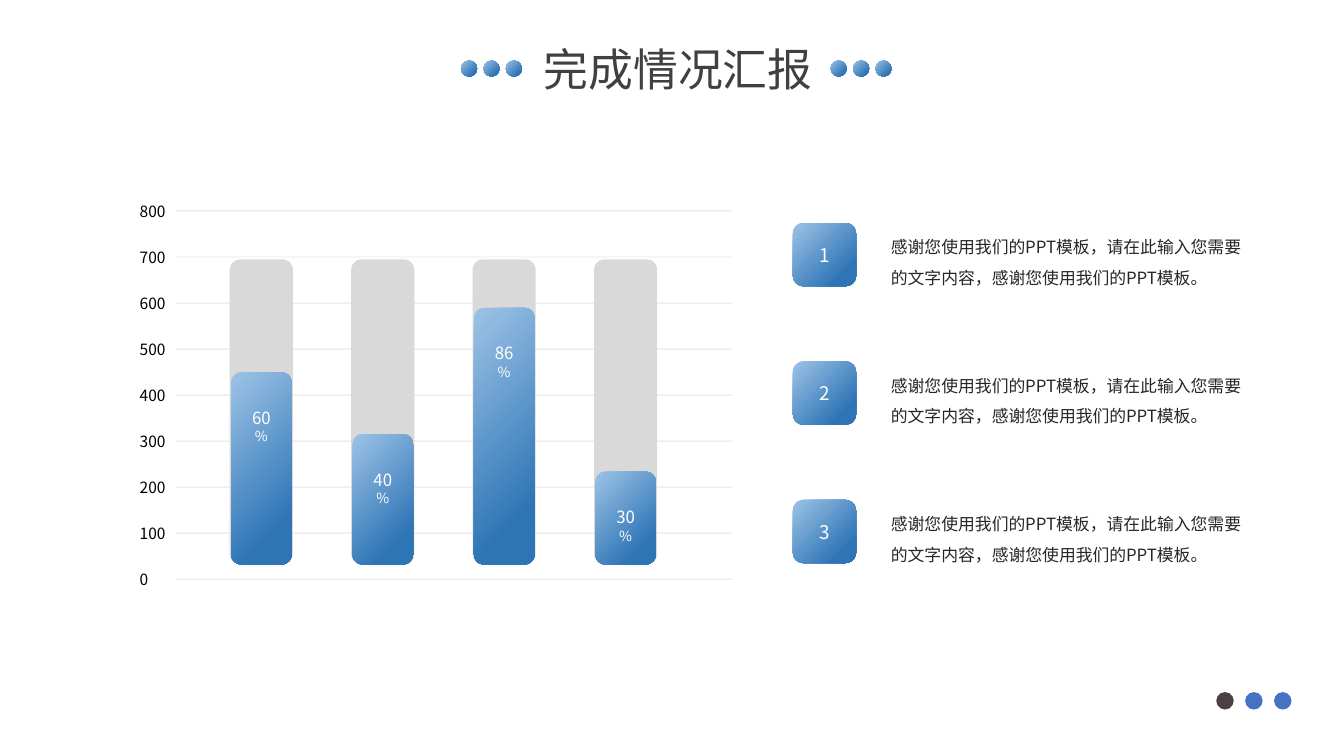
from dataclasses import dataclass

from lxml import etree
from pptx import Presentation
from pptx.dml.color import RGBColor
from pptx.enum.shapes import MSO_CONNECTOR, MSO_SHAPE
from pptx.enum.text import MSO_ANCHOR, MSO_AUTO_SIZE, PP_ALIGN
from pptx.oxml.ns import qn
from pptx.util import Inches, Pt


@dataclass(frozen=True)
class Theme:
    font: str = "Noto Sans CJK SC"
    title: str = "404040"
    body: str = "262626"
    axis: str = "000000"
    white: str = "FFFFFF"
    grid: str = "A6A6A6"
    track: str = "D9D9D9"
    light_blue: str = "9DC3E6"
    deep_blue: str = "2E75B6"
    page_dot: str = "4472C4"
    first_page_dot: str = "4C4042"
    title_size: float = 24
    badge_size: float = 10.1
    body_size: float = 9
    axis_size: float = 8.3
    percent_size: float = 7.5


THEME = Theme()
BARS = [(60, 1.43), (40, 0.97), (86, 1.91), (30, 0.69)]  # percent, height
ITEM_TEXT = "感谢您使用我们的PPT模板，请在此输入您需要的文字内容，感谢您使用我们的PPT模板。"


def inches(*lengths):
    return [Inches(length) for length in lengths]


def add_run(paragraph, text, size, color):
    run = paragraph.add_run()
    run.text = text
    run.font.size = Pt(size)
    run.font.name = THEME.font
    run.font.color.rgb = RGBColor.from_string(color)
    east_asian = etree.SubElement(run.font._element, qn("a:ea"))
    east_asian.set("typeface", THEME.font)


def add_text(slide, box, text, size, color, align=None, spacing=None, margin=None):
    frame = slide.shapes.add_textbox(*inches(*box)).text_frame
    frame.word_wrap = True
    frame.auto_size = MSO_AUTO_SIZE.SHAPE_TO_FIT_TEXT
    if margin is not None:
        frame.margin_left = frame.margin_right = Inches(margin)
        frame.margin_top = frame.margin_bottom = Inches(margin)
    paragraph = frame.paragraphs[0]
    paragraph.alignment = align
    paragraph.line_spacing = spacing
    add_run(paragraph, text, size, color)


def add_block(slide, kind, box, color=None):
    """Adds a borderless shape; without a color it gets the blue gradient."""
    block = slide.shapes.add_shape(kind, *inches(*box))
    block.shadow.inherit = False
    block.line.fill.background()
    if color:
        block.fill.solid()
        block.fill.fore_color.rgb = RGBColor.from_string(color)
    else:
        block.fill.gradient()
        block.fill.gradient_angle = 315
        start, end = block.fill.gradient_stops
        start.color.rgb = RGBColor.from_string(THEME.light_blue)
        start.position = 0
        end.color.rgb = RGBColor.from_string(THEME.deep_blue)
        end.position = 0.81
    return block


def add_dots(slide, left, top, size, pitch, colors):
    for i, color in enumerate(colors):
        add_block(slide, MSO_SHAPE.OVAL, (left + i * pitch, top, size, size), color)


def add_gridline(slide, left, right, y):
    gridline = slide.shapes.add_connector(
        MSO_CONNECTOR.STRAIGHT, *inches(left, y, right, y))
    gridline.line.width = Pt(0.5)
    gridline.line.color.rgb = RGBColor.from_string(THEME.grid)
    properties = gridline._element.spPr
    color = properties.find(".//" + qn("a:srgbClr"))
    etree.SubElement(color, qn("a:alpha")).set("val", "30000")
    etree.SubElement(properties, qn("a:effectLst"))


def add_heading(slide, left, top, width, height):
    title = slide.shapes.title
    title.left, title.top, title.width, title.height = inches(left, top, width, height)
    frame = title.text_frame
    frame.word_wrap = True
    frame.auto_size = MSO_AUTO_SIZE.SHAPE_TO_FIT_TEXT
    frame.vertical_anchor = MSO_ANCHOR.TOP
    frame.paragraphs[0].alignment = PP_ALIGN.CENTER
    add_run(frame.paragraphs[0], "完成情况汇报", THEME.title_size, THEME.title)
    for offset in (1.43, 4.18):
        add_dots(slide, left + offset, top + 0.19, 0.12, 1 / 6, [None] * 3)


def add_bar_panel(slide, left, top, width, height):
    # Scale and gridlines
    steps = 8
    for i in range(steps + 1):
        y = top + height * (1 - i / steps)
        add_text(slide, (left, y - 0.07, 0.2, 0.14), str(i * 100),
                 THEME.axis_size, THEME.axis, PP_ALIGN.JUSTIFY, margin=0)
        add_gridline(slide, left + 0.27, left + width, y)

    # Grey tracks with the completed share in front
    base = top + height - 0.11
    pitch = 2.71 / (len(BARS) - 1)
    for i, (percent, bar_height) in enumerate(BARS):
        x = left + 0.67 + i * pitch
        add_block(slide, MSO_SHAPE.ROUNDED_RECTANGLE,
                  (x, base - 2.27, 0.47, 2.27), THEME.track)
        bar = add_block(slide, MSO_SHAPE.ROUNDED_RECTANGLE,
                        (x + 0.01, base - bar_height, 0.45, bar_height))
        frame = bar.text_frame
        frame.word_wrap = True
        frame.vertical_anchor = MSO_ANCHOR.TOP
        frame.margin_top = Inches(0.24)
        paragraph = frame.paragraphs[0]
        paragraph.alignment = PP_ALIGN.CENTER
        add_run(paragraph, str(percent), THEME.body_size, THEME.white)
        add_run(paragraph, "%", THEME.percent_size, THEME.white)


def add_numbered_items(slide, left, top, width, pitch):
    for i in range(3):
        y = top + i * pitch
        badge = add_block(slide, MSO_SHAPE.ROUNDED_RECTANGLE,
                          (left, y + 0.02, 0.47, 0.47))
        badge.text_frame.vertical_anchor = MSO_ANCHOR.MIDDLE
        paragraph = badge.text_frame.paragraphs[0]
        paragraph.alignment = PP_ALIGN.CENTER
        add_run(paragraph, str(i + 1), THEME.badge_size, THEME.white)
        add_text(slide, (left + 0.63, y, width - 0.63, 0.53), ITEM_TEXT,
                 THEME.body_size, THEME.body, spacing=1.5)


def main():
    deck = Presentation()
    deck.slide_width, deck.slide_height = inches(10, 10 * 9 / 16)
    slide = deck.slides.add_slide(deck.slide_layouts[5])
    add_heading(slide, 2, 0.26, 6.09, 0.5)
    add_bar_panel(slide, 1.04, 1.57, 4.41, 2.74)
    add_numbered_items(slide, 5.9, 1.64, 3.48, 1.03)
    # Page dots
    add_dots(slide, 9.05, 5.15, 0.13, 0.215,
             [THEME.first_page_dot, THEME.page_dot, THEME.page_dot])
    deck.save("out.pptx")


if __name__ == "__main__":
    main()
